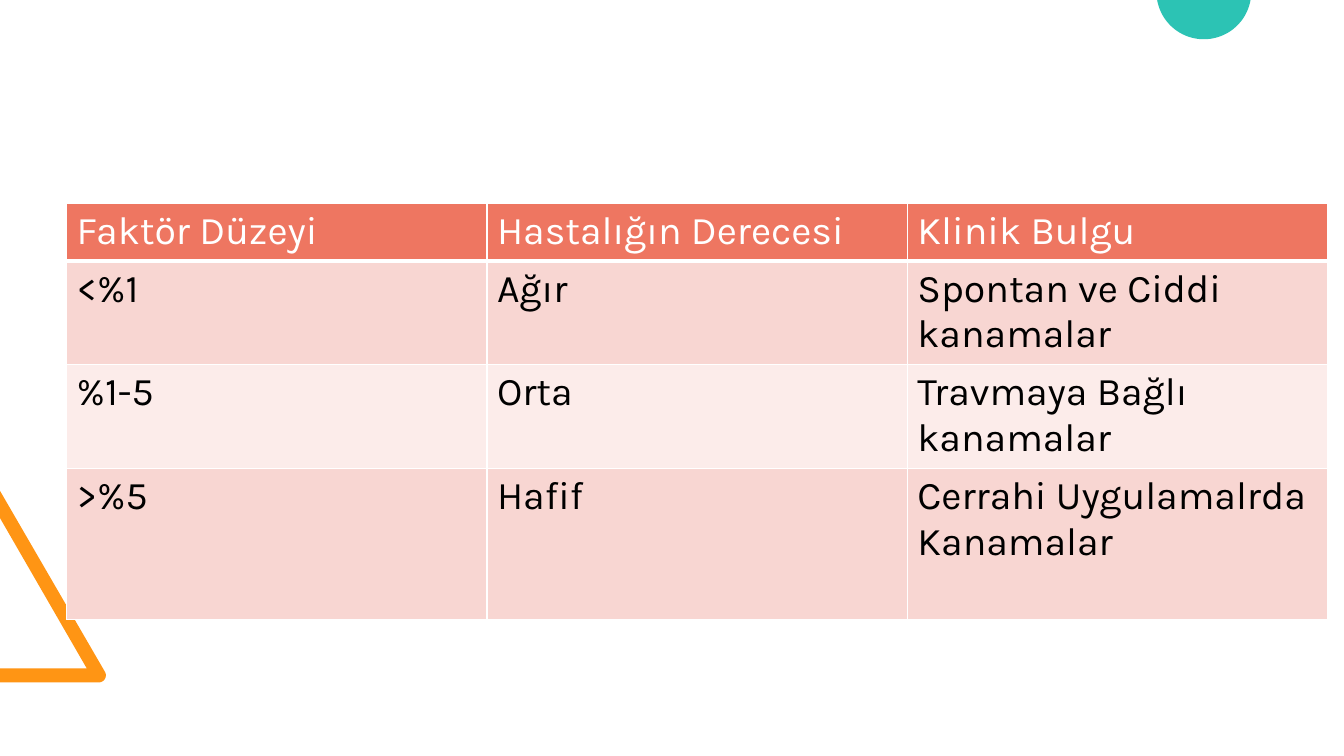
from math import cos, radians, sin

from lxml.etree import SubElement
from pptx import Presentation
from pptx.dml.color import RGBColor
from pptx.oxml.ns import qn
from pptx.util import Inches, Pt

ROWS = [
    ("Faktör Düzeyi", "Hastalığın Derecesi", "Klinik Bulgu"),
    ("<%1", "Ağır", "Spontan ve Ciddi kanamalar"),
    ("%1-5", "Orta", "Travmaya Bağlı kanamalar"),
    (">%5", "Hafif", "Cerrahi Uygulamalrda Kanamalar"),
]
HEIGHTS = (0.57, 1.03, 1.03, 1.5)
LEFT, TOP, COL = 0.66, 2.02, 4.17
FONT = "Karla"
COLORS = {
    "orange": "FF9514",
    "teal": "2CC3B4",
    "head": "EE7661",
    "odd": "F8D6D2",
    "even": "FCECEA",
    "white": "FFFFFF",
    "black": "000000",
}


def color(name):
    return RGBColor.from_string(COLORS[name])


def arc(x, y, radius, start, end, step=3):
    """Points on a circle, with angles in degrees measured clockwise."""
    return [(x + radius * cos(radians(a)), y + radius * sin(radians(a)))
            for a in range(start, end + 1, step)]


def outline(slide, points, fill):
    spots = [(Inches(x), Inches(y)) for x, y in points]
    pen = slide.shapes.build_freeform(*spots[0])
    pen.add_line_segments(spots[1:], close=True)
    shape = pen.convert_to_shape()
    shape.shadow.inherit = False
    shape.fill.solid()
    shape.fill.fore_color.rgb = color(fill)
    shape.line.fill.background()


def border(cell, widths):
    props = cell._tc.get_or_add_tcPr()
    for side, width in widths.items():
        line = SubElement(props, qn(f"a:ln{side}"), w=str(Pt(width)))
        fill = SubElement(line, qn("a:solidFill"))
        SubElement(fill, qn("a:srgbClr"), val=COLORS["white"])


def add_grid(slide):
    cols = len(ROWS[0])
    frame = slide.shapes.add_table(
        len(ROWS), cols, Inches(LEFT), Inches(TOP),
        Inches(COL * cols), Inches(sum(HEIGHTS)))
    table = frame.table
    for col in table.columns:
        col.width = Inches(COL)
    for r, (texts, height) in enumerate(zip(ROWS, HEIGHTS)):
        table.rows[r].height = Inches(height)
        shade = "head" if r == 0 else "odd" if r % 2 else "even"
        for c, text in enumerate(texts):
            cell = table.cell(r, c)
            border(cell, {"L": 1, "R": 1, "T": 3 if r == 1 else 1,
                          "B": 3 if r == 0 else 1})
            cell.fill.solid()
            cell.fill.fore_color.rgb = color(shade)
            cell.text = text
            font = cell.text_frame.paragraphs[0].font
            font.name, font.size, font.bold = FONT, Pt(28), False
            font.color.rgb = color("white" if r == 0 else "black")


def main():
    deck = Presentation()
    deck.slide_width, deck.slide_height = Inches(13.33), Inches(7.5)
    slide = deck.slides.add_slide(deck.slide_layouts[6])

    # Triangle corner at the left edge, with a rounded tip
    tip = arc(0.98, 6.7, 0.07, -30, 90)
    outline(slide, [(0, 6.63), (0.86, 6.63), (0, 5.14), (0, 4.87),
                    *tip, (0, 6.77)], "orange")

    # Circle cut off by the top edge
    outline(slide, arc(11.94, -0.08, 0.47, 10, 170, 2), "teal")

    # Table of factor levels
    add_grid(slide)
    deck.save("out.pptx")


if __name__ == "__main__":
    main()
